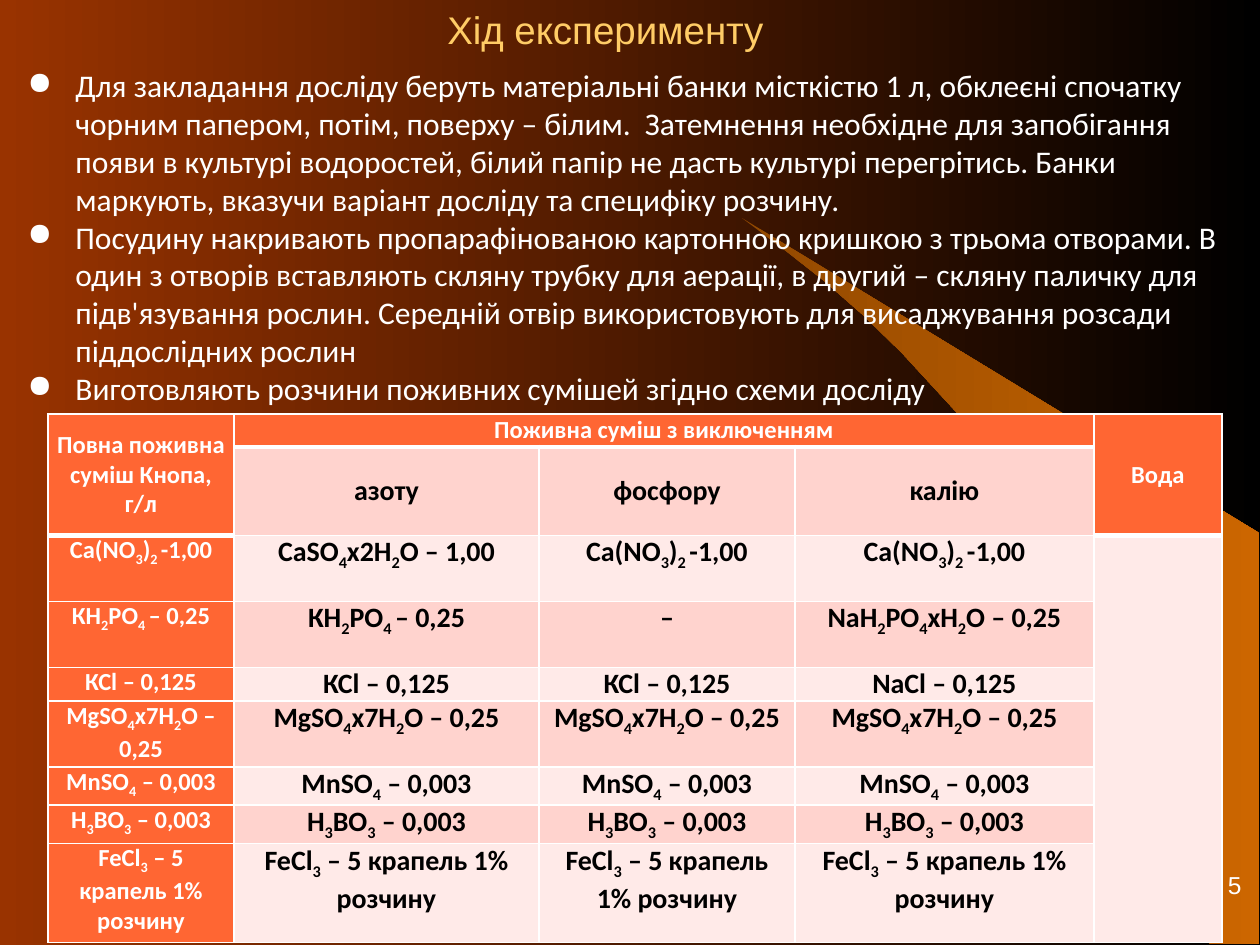
from dataclasses import dataclass

from lxml import etree
from pptx import Presentation
from pptx.dml.color import RGBColor
from pptx.enum.text import MSO_ANCHOR, MSO_AUTO_SIZE, PP_ALIGN
from pptx.oxml.ns import qn
from pptx.util import Pt

CENTER, RIGHT, LEFT = PP_ALIGN.CENTER, PP_ALIGN.RIGHT, PP_ALIGN.LEFT
TOP, MIDDLE, BOTTOM = MSO_ANCHOR.TOP, MSO_ANCHOR.MIDDLE, MSO_ANCHOR.BOTTOM
FIT_SHAPE = MSO_AUTO_SIZE.SHAPE_TO_FIT_TEXT
PX_PER_INCH = 126


@dataclass(frozen=True)
class Theme:
    back: tuple = ("993300", "000000")
    beam: tuple = ("924900", "CC6600")
    title: str = "FFCC66"
    light: str = "FFFFFF"
    dark: str = "000000"
    header: str = "FF6633"
    bands: tuple = ("FFEAE8", "FFD3CE")
    head_font: str = "Arial"
    body_font: str = "Calibri"
    title_size: int = 22
    body_size: int = 18
    cell_size: int = 16
    small_size: int = 14
    thin: int = 1
    thick: int = 3


THEME = Theme()

BEAM_POINTS = [
    (417, 724), (517, 726), (517, 315), (0, 0), (44, 33), (81, 62),
    (121, 97), (160, 135), (218, 198), (270, 266), (306, 325), (339, 386),
    (364, 447), (383, 503), (396, 549), (408, 609), (413, 659),
]

STEPS = [
    "Для закладання досліду беруть матеріальні банки місткістю 1 л, обклеєні "
    "спочатку чорним папером, потім, поверху – білим.  Затемнення необхідне для "
    "запобігання появи в культурі водоростей, білий папір не дасть культурі "
    "перегрітись. Банки маркують, вказучи варіант досліду та специфіку розчину.",
    "Посудину накривають пропарафінованою картонною кришкою з трьома отворами. "
    "В один з отворів вставляють скляну трубку для аерації, в другий – скляну "
    "паличку для підв'язування рослин. Середній отвір використовують для "
    "висаджування розсади піддослідних рослин",
    "Виготовляють розчини поживних сумішей згідно схеми досліду",
]

# Text between a pair of ~ marks is subscript.
NITRATE = "Са(NO~3~)~2 ~-1,00"
PHOSPHATE = "КН~2~РО~4 ~– 0,25"
CHLORIDE = "КСl – 0,125"
ROWS = [
    ["Повна поживна суміш Кнопа, г/л", "Поживна суміш з виключенням", "", "", "Вода"],
    ["", "азоту", "фосфору", "калію", ""],
    [NITRATE, "CaSO~4~x2H~2~O – 1,00", NITRATE, NITRATE, ""],
    [PHOSPHATE, PHOSPHATE, "–", "NaH~2~PO~4~xH~2~O – 0,25", ""],
    [CHLORIDE, CHLORIDE, CHLORIDE, "NaCl – 0,125", ""],
    ["МgSO~4~x7Н~2~О – 0,25"] * 4 + [""],
    ["MnSO~4~ – 0,003"] * 4 + [""],
    ["H~3~BO~3~ – 0,003"] * 4 + [""],
    ["FeCl~3~ – 5 крапель 1% розчину"] * 4 + [""],
]
COL_WIDTHS = [186, 305, 256, 299, 128]
ROW_HEIGHTS = [33, 33, 66, 66, 33, 66, 33, 33, 99]
MERGES = [((0, 0), (1, 0)), ((0, 1), (0, 3)), ((0, 4), (1, 4)), ((2, 4), (8, 4))]


def px(n):
    return round(n * 914400 / PX_PER_INCH)


def rgb(color):
    return RGBColor.from_string(color)


def fill_gradient(fill, colors):
    fill.gradient()
    fill.gradient_angle = 0
    for stop, color in zip(fill.gradient_stops, colors):
        stop.color.rgb = rgb(color)


def style_run(r, font, size, color, bold=False):
    r.font.name, r.font.size, r.font.bold = font, Pt(size), bold
    r.font.color.rgb = rgb(color)


def add_text(s, box, lines, font, size, color, align=LEFT, anchor=MIDDLE):
    tf = s.shapes.add_textbox(*map(px, box)).text_frame
    tf.word_wrap = True
    tf.vertical_anchor = anchor
    tf.text = "\n".join(lines)
    for p in tf.paragraphs:
        p.alignment = align
        style_run(p.runs[0], font, size, color)
    return tf


def add_beam(s, box):
    left, top = box
    points = [(px(left + x), px(top + y)) for x, y in BEAM_POINTS]
    builder = s.shapes.build_freeform(*points[0])
    builder.add_line_segments(points[1:], close=True)
    sp = builder.convert_to_shape()
    sp.shadow.inherit = False
    sp.line.fill.background()
    fill_gradient(sp.fill, THEME.beam)


def add_title(s, box):
    add_text(s, box, ["Хід експерименту"], THEME.head_font, THEME.title_size,
             THEME.title, CENTER)


def add_number(s, box):
    tf = add_text(s, box, ["5"], THEME.head_font, THEME.small_size, THEME.light,
                  RIGHT, BOTTOM)
    tf.margin_top = tf.margin_bottom = 0


def add_steps(s, box):
    tf = add_text(s, box, STEPS, THEME.body_font, THEME.body_size, THEME.light)
    tf.auto_size = FIT_SHAPE
    for p in tf.paragraphs:
        pPr = p._p.get_or_add_pPr()
        pPr.set("marL", str(px(48)))
        pPr.set("indent", str(-px(48)))
        etree.SubElement(pPr, qn("a:buChar"), char="●")


def set_borders(cell, bottom):
    """Draw white borders; they have to precede the fill in the cell properties."""
    tcPr = cell._tc.get_or_add_tcPr()
    widths = {"lnL": THEME.thin, "lnR": THEME.thin, "lnT": THEME.thin, "lnB": bottom}
    for i, (tag, width) in enumerate(widths.items()):
        ln = etree.Element(qn(f"a:{tag}"), w=str(Pt(width)))
        solid = etree.SubElement(ln, qn("a:solidFill"))
        etree.SubElement(solid, qn("a:srgbClr"), val=THEME.light)
        tcPr.insert(i, ln)


def fill_cell(cell, text, row, col):
    is_head = row == 0 or col == 0 or (row == 1 and col == 4)
    is_label = row < 2
    cell.fill.solid()
    cell.fill.fore_color.rgb = rgb(THEME.header if is_head else THEME.bands[row % 2])
    cell.margin_left = cell.margin_right = px(9)
    cell.margin_top = cell.margin_bottom = 0
    cell.vertical_anchor = MIDDLE if is_label else TOP
    set_borders(cell, THEME.thick if is_head and is_label else THEME.thin)
    p = cell.text_frame.paragraphs[0]
    p.alignment = CENTER
    size, color = ((THEME.small_size, THEME.light) if is_head
                   else (THEME.cell_size, THEME.dark))
    for i, part in enumerate(text.split("~") if text else []):
        r = p.add_run()
        r.text = part
        style_run(r, THEME.body_font, size, color, bold=True)
        if i % 2:
            r._r.get_or_add_rPr().set("baseline", "-25000")


def add_solutions(s, box):
    table = s.shapes.add_table(len(ROWS), len(COL_WIDTHS), *map(px, box)).table
    table.horz_banding = False
    for column, width in zip(table.columns, COL_WIDTHS):
        column.width = px(width)
    for row, height in zip(table.rows, ROW_HEIGHTS):
        row.height = px(height)
    for i, texts in enumerate(ROWS):
        for j, text in enumerate(texts):
            fill_cell(table.cell(i, j), text, i, j)
    for start, end in MERGES:
        table.cell(*start).merge(table.cell(*end))


def main():
    prs = Presentation()
    prs.slide_width, prs.slide_height = px(1260), px(945)
    s = prs.slides.add_slide(prs.slide_layouts[6])
    fill_gradient(s.background.fill, THEME.back)
    add_beam(s, (742, 218))
    add_title(s, (428, 0, 355, 58))
    add_number(s, (992, 847, 262, 53))
    add_steps(s, (15, 58, 1239, 357))
    add_solutions(s, (48, 414, sum(COL_WIDTHS), 486))
    prs.save("out.pptx")


if __name__ == "__main__":
    main()
